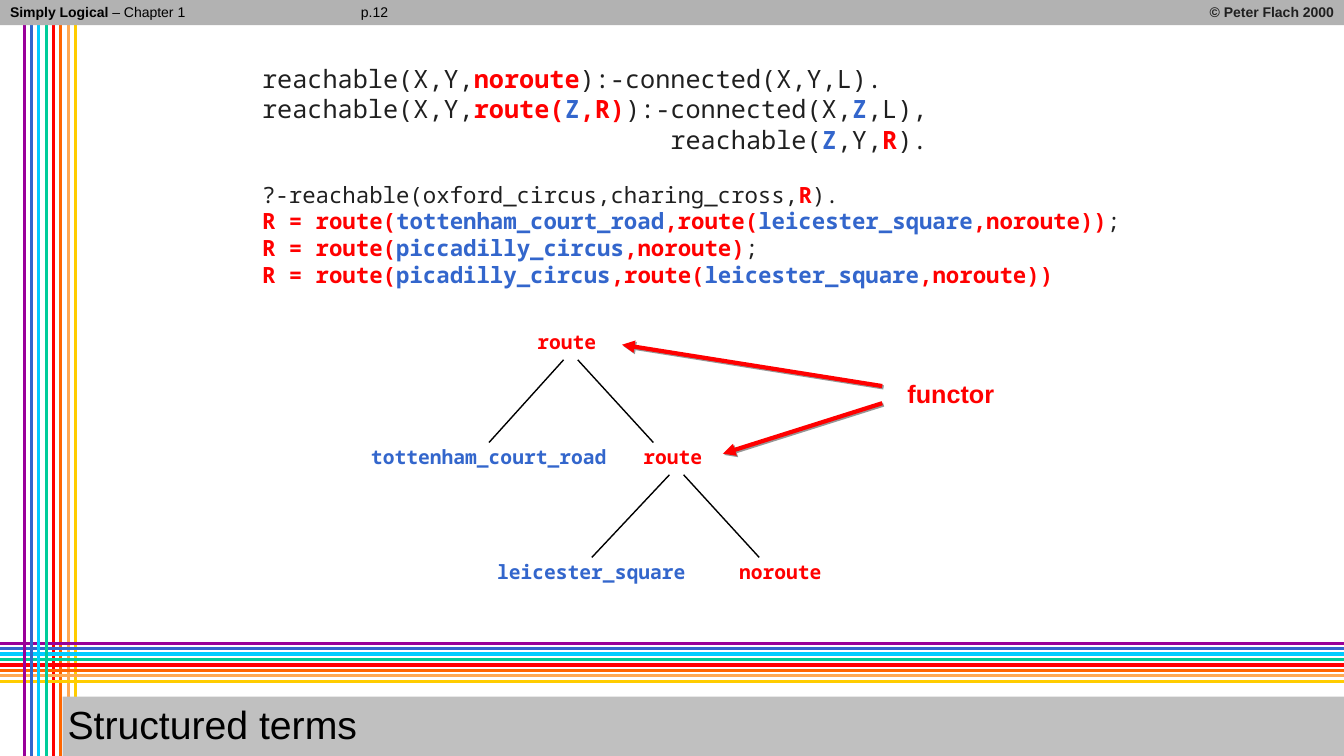
from lxml.etree import SubElement
from pptx import Presentation
from pptx.dml.color import RGBColor
from pptx.enum.shapes import MSO_CONNECTOR as Link, MSO_SHAPE as Preset
from pptx.enum.text import MSO_ANCHOR as Anchor, MSO_AUTO_SIZE as Fit, PP_ALIGN as Align
from pptx.oxml.ns import qn
from pptx.util import Inches, Pt

COLORS = {
    "purple": "990099", "blue": "3366CC", "cyan": "00CCFF", "green": "00CC99",
    "red": "FF0000", "orange": "FF6600", "peach": "FFA953", "yellow": "FFCC00",
    "black": "000000", "ink": "202020", "header": "B2B2B2", "band": "C0C0C0",
    "shadow": "969696",
}
STRIPES = ["purple", "blue", "cyan", "green", "red", "orange", "peach", "yellow"]
SANS, MONO = "Arial", "Noto Sans Mono"
WIDTH, HEIGHT = 13.33, 7.5


class Page:
    def __init__(self, deck):
        self.slide = deck.slides.add_slide(deck.slide_layouts[5])
        self.shapes = self.slide.shapes

    def color(self, name):
        return RGBColor.from_string(COLORS[name])

    def apply(self, target, formats):
        for name, value in formats.items():
            setattr(target, name, value)

    def add_spans(self, para, spans, size, font=SANS, spacing=0.9, align=Align.LEFT):
        self.apply(para, {"line_spacing": spacing, "alignment": align})
        for text, color, bold in spans:
            span = para.add_run()
            span.text = text
            self.apply(span.font, {"size": Pt(size), "name": font, "bold": bold})
            span.font.color.rgb = self.color(color)

    def frame(self, box, wrap=True, fit=Fit.SHAPE_TO_FIT_TEXT, anchor=Anchor.TOP):
        margins = dict.fromkeys(
            ["margin_left", "margin_top", "margin_right", "margin_bottom"], Inches(0.05))
        self.apply(box.text_frame, {
            **margins, "word_wrap": wrap, "auto_size": fit, "vertical_anchor": anchor})

    def fill(self, shape, color):
        shape.fill.solid()
        shape.fill.fore_color.rgb = self.color(color)
        shape.line.fill.background()

    def bar(self, left, top, width, height, color):
        shape = self.shapes.add_shape(
            Preset.RECTANGLE, Inches(left), Inches(top), Inches(width), Inches(height))
        shape.shadow.inherit = False
        self.fill(shape, color)

    def title(self, text, left, top, width, height):
        box = self.shapes.title
        box.element.getparent().append(box.element)
        self.apply(box, {"left": Inches(left), "top": Inches(top),
                         "width": Inches(width), "height": Inches(height)})
        self.fill(box, "band")
        self.frame(box, fit=Fit.NONE, anchor=Anchor.MIDDLE)
        self.add_spans(box.text_frame.paragraphs[0], [(text, "black", False)], 28)

    def box(self, left, top, width, height, wrap=True):
        box = self.shapes.add_textbox(
            Inches(left), Inches(top), Inches(width), Inches(height))
        self.frame(box, wrap)
        return box

    def label(self, left, top, width, height, spans, size, wrap=False, **formats):
        box = self.box(left, top, width, height, wrap)
        self.add_spans(box.text_frame.paragraphs[0], spans, size, **formats)
        return box

    def code(self, left, top, width, height, lines):
        box = self.box(left, top, width, height)
        for index, (size, before, indent, spans) in enumerate(lines):
            para = box.text_frame.add_paragraph() if index else box.text_frame.paragraphs[0]
            para.space_before = Pt(before)
            para._p.get_or_add_pPr().set("marL", str(Inches(indent)))
            self.add_spans(para, [(text, color, color != "ink") for text, color in spans],
                           size, MONO, 1.0)

    def cast_shadow(self, effects):
        shadow = SubElement(effects, qn("a:outerShdw"), blurRad="0",
                            dist=str(Pt(1.4)), dir="2700000", algn="ctr", rotWithShape="0")
        SubElement(shadow, qn("a:srgbClr"), val=COLORS["shadow"])

    def shade_text(self, box):
        props = box.text_frame.paragraphs[0].runs[0]._r.get_or_add_rPr()
        effects = SubElement(props, qn("a:effectLst"))
        props.find(qn("a:solidFill")).addnext(effects)
        self.cast_shadow(effects)

    def line(self, start, end, color, weight, target=None, arrow=False):
        line = self.shapes.add_connector(
            Link.STRAIGHT, *[Inches(value) for value in (*start, *end)])
        line.line.color.rgb = self.color(color)
        line.line.width = Pt(weight)
        props = line.element.spPr
        effects = SubElement(props, qn("a:effectLst"))
        if arrow:
            SubElement(props.find(qn("a:ln")), qn("a:tailEnd"), type="triangle")
            self.cast_shadow(effects)
        if target is not None:
            line.end_connect(target, 0)


def draw_stripes(page):
    columns, rows = [], []
    for index, color in enumerate(STRIPES):
        x, y = 0.24 + 0.51 / 7 * index, 6.38 + 0.38 / 7 * index
        columns.append(((x, 0), (x, HEIGHT), color))
        rows.append(((WIDTH, y), (0, y), color))
    for start, end, color in columns[4:] + rows + columns[:4]:
        page.line(start, end, color, 2.25)


def draw_tree(page):
    def node(text, color, left, top, width):
        return page.label(left, top, width, 0.33, [(text, color, True)], 14, font=MONO)

    branches = [
        (5.28, 3.25, ("tottenham_court_road", 3.63, 2.44), ("route", 6.33, 0.69)),
        (6.33, 4.39, ("leicester_square", 4.88, 1.98), ("noroute", 7.28, 0.93)),
    ]
    node("route", "red", 5.28, 3.25, 0.69)
    for x, y, (place, place_left, place_width), (term, term_left, term_width) in branches:
        below = y + 1.14
        leaf = node(place, "blue", place_left, below, place_width)
        node(term, "red", term_left, below, term_width)
        page.line((x + 0.45, y + 0.32), (x + 1.2, below), "black", 1)
        page.line((x + 0.31, y + 0.32), (x - 0.46, below), "black", 1, leaf)


def main():
    deck = Presentation()
    deck.slide_width, deck.slide_height = Inches(WIDTH), Inches(HEIGHT)
    page = Page(deck)
    draw_stripes(page)

    page.bar(0, 0, WIDTH, 0.25, "header")
    page.label(0.05, 0, 2.56, 0.27, [
        ("Simply Logical", "black", True), (" – Chapter 1", "black", False)], 10, wrap=True)
    page.label(9.78, 0, 3.5, 0.27, [("© Peter Flach 2000", "ink", True)], 10,
               wrap=True, align=Align.RIGHT)
    page.label(3.53, 0, 0.38, 0.26, [("p.12", "black", False)], 10)
    page.title("Structured terms", 0.62, 6.91, 12.72, 0.6)

    answer = ("R = route(", "red")
    leicester = [(",route(", "red"), ("leicester_square", "blue"), (",noroute))", "red")]
    page.code(2.55, 0.58, 8.73, 2.34, [
        (18, 0, 0, [("reachable(X,Y,", "ink"), ("noroute", "red"),
                    ("):-connected(X,Y,L).", "ink")]),
        (18, 0, 0, [("reachable(X,Y,", "ink"), ("route(", "red"), ("Z", "blue"),
                    (",R)", "red"), ("):-connected(X,", "ink"), ("Z", "blue"),
                    (",L),", "ink")]),
        (18, 0, 4.05, [("reachable(", "ink"), ("Z", "blue"), (",Y,", "ink"),
                       ("R", "red"), (").", "ink")]),
        (16, 19, 0, [("?-reachable(oxford_circus,charing_cross,", "ink"),
                     ("R", "red"), (").", "ink")]),
        (16, 0, 0, [answer, ("tottenham_court_road", "blue"), *leicester, (";", "ink")]),
        (16, 0, 0, [answer, ("piccadilly_circus", "blue"), (",noroute)", "red"),
                    (";", "ink")]),
        (16, 0, 0, [answer, ("picadilly_circus", "blue"), *leicester]),
    ])

    draw_tree(page)
    functor = page.label(8.95, 3.74, 0.97, 0.41, [("functor", "red", True)], 18)
    page.shade_text(functor)
    for start, end in [((8.75, 3.83), (6.17, 3.42)), ((8.75, 4), (7.17, 4.5))]:
        page.line(start, end, "red", 3, arrow=True)
    deck.save("out.pptx")


if __name__ == "__main__":
    main()
